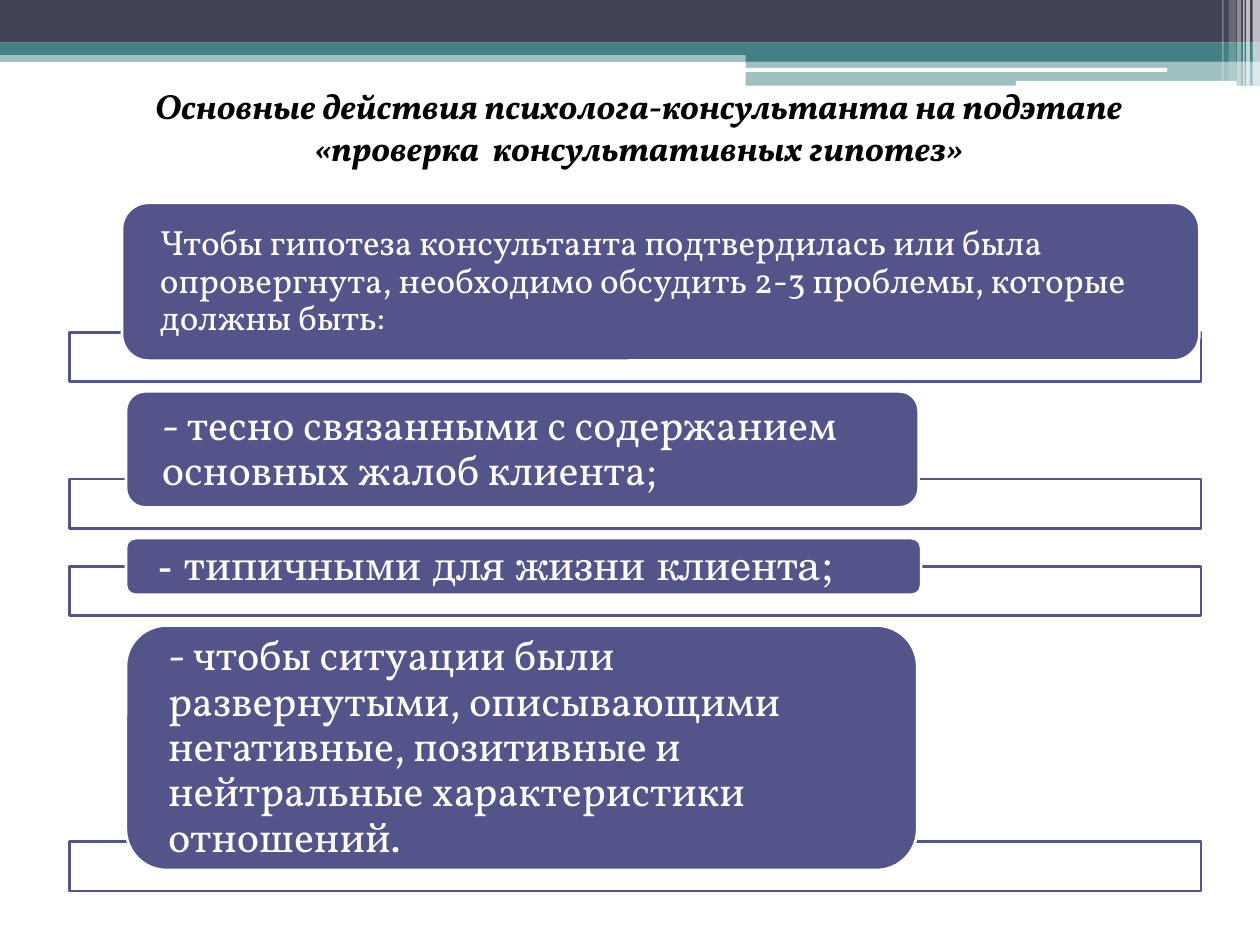
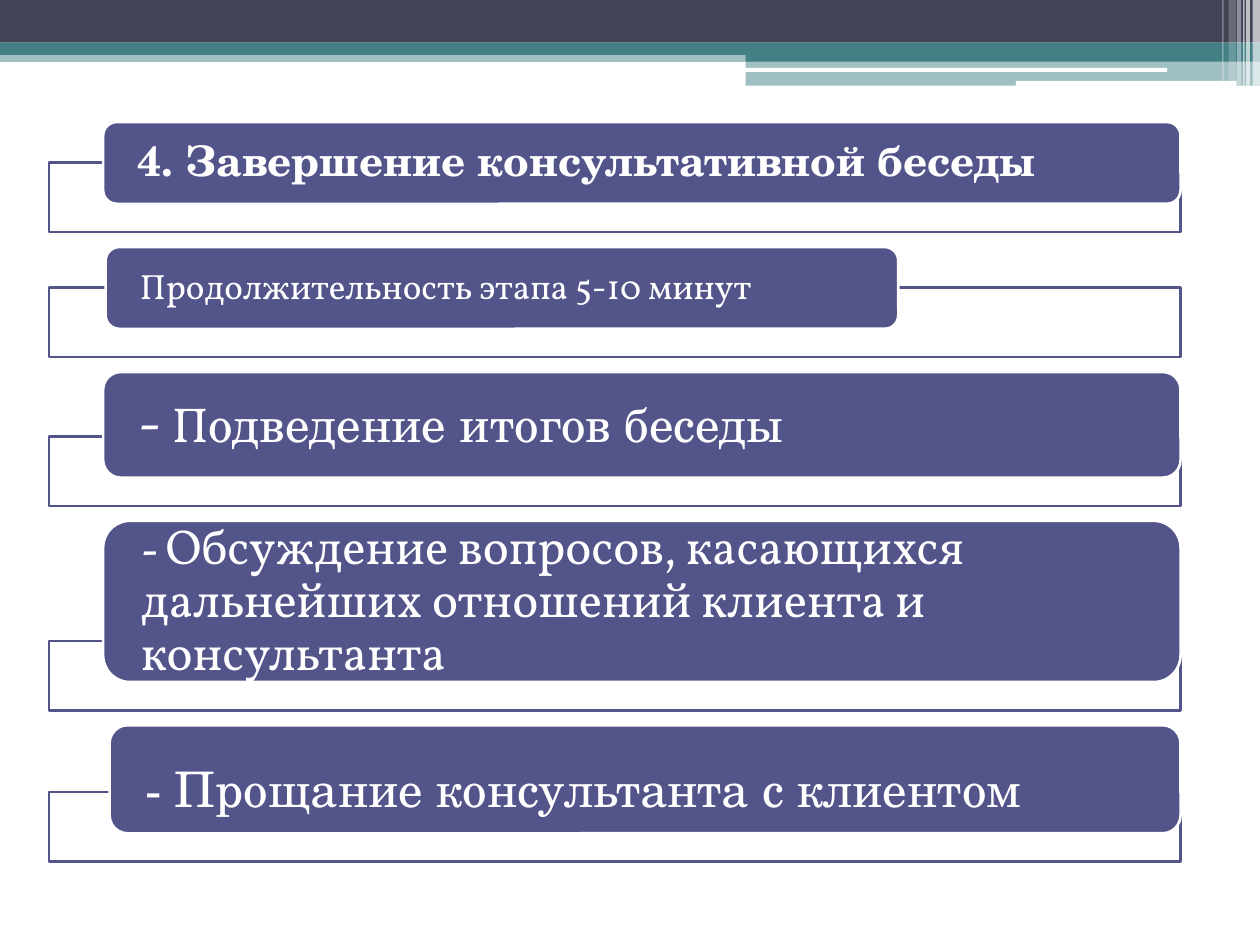
import pptx
import pptx.util
import pptx.dml.color
import pptx.enum.shapes
import pptx.enum.text
import pptx.oxml
import pptx.oxml.ns

Cm = pptx.util.Cm
Pt = pptx.util.Pt
RECT = pptx.enum.shapes.MSO_SHAPE.RECTANGLE
ROUND = pptx.enum.shapes.MSO_SHAPE.ROUNDED_RECTANGLE
ANCHOR = pptx.enum.text.MSO_ANCHOR
ALIGN = pptx.enum.text.PP_ALIGN

VOLLKORN = "Vollkorn"
SCHOLA = "TeX Gyre Schola"
VIOLET = "53548A"
TEAL = "438086"
SLATE = "424456"
WHITE = "FFFFFF"
BLACK = "000000"


def rgb(value):
    return pptx.dml.color.RGBColor.from_string(value)


def box(s, kind, left, top, width, height, fill, alpha=100, line=None):
    sp = s.shapes.add_shape(kind, Cm(left), Cm(top), Cm(width), Cm(height))
    sp.shadow.inherit = False
    sp.fill.solid()
    sp.fill.fore_color.rgb = rgb(fill)
    if alpha < 100:
        clr = sp._element.spPr.find(".//" + pptx.oxml.ns.qn("a:srgbClr"))
        clr.append(pptx.oxml.parse_xml(
            f'<a:alpha {pptx.oxml.ns.nsdecls("a")} val="{alpha * 1000}"/>'))
    if line:
        sp.line.color.rgb = rgb(line)
        sp.line.width = Pt(1.5)
    else:
        sp.line.fill.background()
    return sp


prs = pptx.Presentation()
prs.slide_width = Cm(25.4)
prs.slide_height = Cm(19.05)
checking = prs.slides.add_slide(prs.slide_layouts[5])
closing = prs.slides.add_slide(prs.slide_layouts[6])

bands = [
    (RECT, 0, 1.02, 25.4, 0.23, TEAL, 50),
    (RECT, 0, 0, 25.4, 0.86, SLATE, 100),
    (RECT, 0, 0.86, 25.4, 0.25, TEAL, 100),
    (RECT, 15.03, 0.99, 10.37, 0.25, TEAL, 100),
    (RECT, 15.03, 1.23, 10.37, 0.5, TEAL, 50),
    (ROUND, 15.02, 1.37, 8.51, 0.08, WHITE, 100),
    (ROUND, 20.48, 1.63, 4.45, 0.1, WHITE, 100),
    (RECT, 25.25, 0, 0.15, 1.73, WHITE, 65),
    (RECT, 25.12, 0, 0.08, 1.73, WHITE, 65),
    (RECT, 25.06, 0, 0.03, 1.73, WHITE, 60),
    (RECT, 24.94, 0, 0.08, 1.73, WHITE, 40),
    (RECT, 24.77, 0, 0.15, 1.63, WHITE, 20),
    (RECT, 24.64, 0, 0.03, 1.63, WHITE, 30),
]
master_tree = prs.slide_master.shapes._spTree
for i, band in enumerate(bands):
    sp = box(closing, *band)
    master_tree.insert(2 + i, sp._element)

title = checking.shapes.title
title.left, title.top, title.width, title.height = Cm(1.57), Cm(1.57), Cm(22.63), Cm(1.96)
tf = title.text_frame
tf.word_wrap = True
tf.auto_size = pptx.enum.text.MSO_AUTO_SIZE.NONE
tf.vertical_anchor = ANCHOR.TOP
title_lines = [
    "Основные действия психолога-консультанта на подэтапе",
    "«проверка  консультативных гипотез»",
]
for i, text in enumerate(title_lines):
    p = tf.add_paragraph() if i else tf.paragraphs[0]
    p.alignment = ALIGN.CENTER
    r = p.add_run()
    r.text = text
    r.font.name = VOLLKORN
    r.font.size = Pt(20)
    r.font.bold = True
    r.font.italic = True
    r.font.color.rgb = rgb(BLACK)

checking_rows = [
    (2.46, 21.72, 3.18, 0, [("Чтобы гипотеза консультанта подтвердилась или была опровергнута, "
                             "необходимо обсудить 2-3 проблемы, которые должны быть:",
                             20, VOLLKORN, False)]),
    (2.54, 15.98, 2.34, 0, [("- тесно связанными с содержанием основных жалоб клиента;",
                             24, VOLLKORN, False)]),
    (2.54, 16.03, 1.14, 0, [("- типичными для жизни клиента;", 24, SCHOLA, False)]),
    (2.54, 15.95, 4.93, 0, [("- чтобы ситуации были развернутыми, описывающими негативные, "
                             "позитивные и нейтральные характеристики отношений.",
                             24, VOLLKORN, False)]),
]
closing_rows = [
    (2.08, 21.72, 1.65, 0, [("4. Завершение консультативной беседы", 24, SCHOLA, True)]),
    (2.13, 15.98, 1.65, 0, [("Продолжительность этапа 5-10 минут", 20, VOLLKORN, False)]),
    (2.08, 21.72, 2.13, 0, [("- ", 32, VOLLKORN, False),
                            ("П", 28, VOLLKORN, False),
                            ("одведение итогов беседы", 28, SCHOLA, False)]),
    (2.08, 21.72, 3.25, 0, [("- ", 24, VOLLKORN, True),
                            ("Обсуждение вопросов, касающихся дальнейших отношений "
                             "клиента и консультанта", 28, VOLLKORN, False)]),
    (2.21, 21.59, 2.18, 0.5, [("- Прощание консультанта с клиентом", 28, SCHOLA, False)]),
]
lists = [
    (checking, checking_rows, 4.09, 1.4, 0.99, 0.42, 0.2),
    (closing, closing_rows, 2.46, 0.99, 1.4, 0.57, 0.3),
]
for s, rows, top, rail_left, rail_height, overhang, gap in lists:
    for left, width, height, inset_top, runs in rows:
        rail_bottom = top + height + overhang
        box(s, RECT, rail_left, rail_bottom - rail_height, 22.81, rail_height, WHITE, 90, VIOLET)
        sp = box(s, ROUND, left, top, width, height, VIOLET, line=WHITE)
        tf = sp.text_frame
        tf.word_wrap = True
        tf.vertical_anchor = ANCHOR.MIDDLE
        tf.margin_left = tf.margin_right = Cm(0.61)
        tf.margin_top = Cm(inset_top)
        tf.margin_bottom = 0
        p = tf.paragraphs[0]
        p.alignment = ALIGN.LEFT
        p.line_spacing = 0.9
        for text, size, font, bold in runs:
            r = p.add_run()
            r.text = text
            r.font.name = font
            r.font.size = Pt(size)
            r.font.bold = bold
            r.font.color.rgb = rgb(WHITE)
        top = rail_bottom + gap

prs.save("out.pptx")
